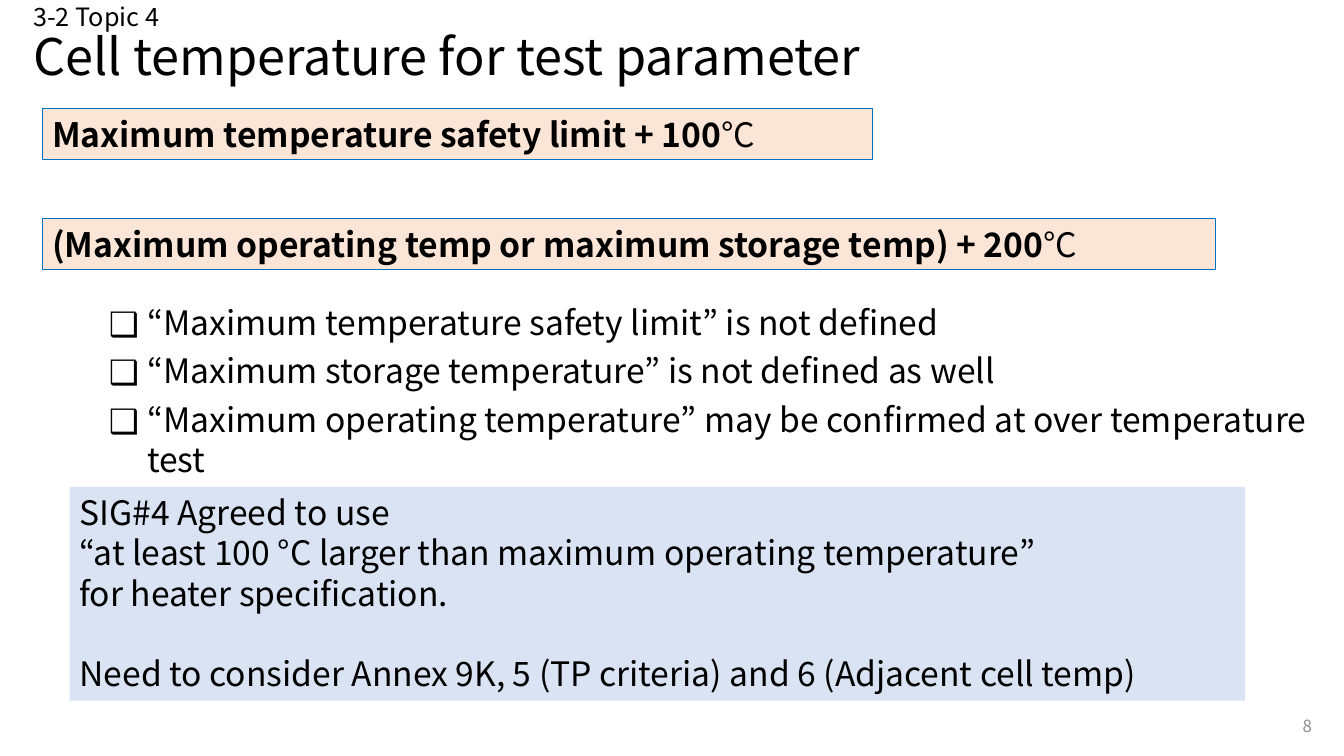
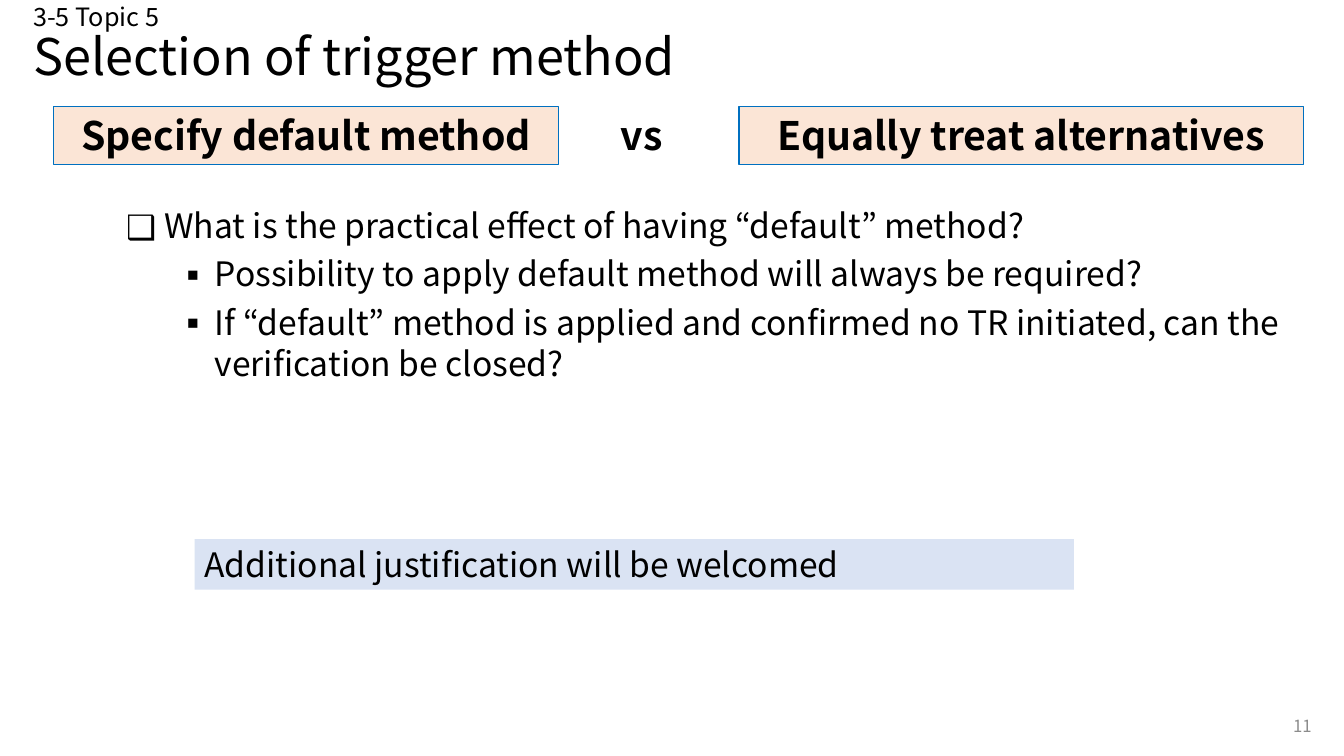
from dataclasses import dataclass

from lxml import etree
from pptx import Presentation
from pptx.dml.color import RGBColor
from pptx.enum.shapes import MSO_SHAPE
from pptx.enum.text import MSO_ANCHOR, MSO_AUTO_SIZE, PP_ALIGN
from pptx.oxml.ns import qn
from pptx.util import Inches, Pt

RECT = MSO_SHAPE.RECTANGLE
TOP, MIDDLE = MSO_ANCHOR.TOP, MSO_ANCHOR.MIDDLE
LEFT, CENTER, RIGHT = PP_ALIGN.LEFT, PP_ALIGN.CENTER, PP_ALIGN.RIGHT
FIXED = MSO_AUTO_SIZE.NONE

FONT = "Noto Sans CJK JP"
BLACK, GRAY = "000000", "8C8C8C"
PEACH, BLUE, PALE = "FBE5D6", "0070C0", "DAE3F3"
BULLETS = "❑▪"
LINE_GAP = 28.8

Area = tuple[float, float, float, float]


@dataclass
class Box:
    area: Area
    text: str
    size: float = 24
    bold: bool = False
    fill: str = ""
    line: str = ""
    align: PP_ALIGN = LEFT
    anchor: MSO_ANCHOR = TOP
    color: str = BLACK
    tail: str = ""
    gap: float = 0


@dataclass
class Item:
    text: str
    level: int = 0


@dataclass
class Page:
    number: int
    topic: str
    title: str
    area: Area
    items: list[Item]
    boxes: list[Box]


def paint(color: str) -> RGBColor:
    return RGBColor.from_string(color)


def style(run, size: float, bold: bool = False, color: str = BLACK) -> None:
    font = run.font
    font.size, font.bold, font.name = Pt(size), bold, FONT
    font.color.rgb = paint(color)
    etree.SubElement(run._r.get_or_add_rPr(), qn("a:ea"), typeface=FONT)


def place(shape, area: Area) -> None:
    shape.left, shape.top, shape.width, shape.height = map(Inches, area)


def setup(shape, anchor: MSO_ANCHOR):
    frame = shape.text_frame
    frame.word_wrap, frame.auto_size = True, FIXED
    frame.vertical_anchor = anchor
    return frame


def draw_box(slide, box: Box) -> None:
    area = map(Inches, box.area)
    if box.fill:
        shape = slide.shapes.add_shape(RECT, *area)
        shape.shadow.inherit = False
        shape.fill.solid()
        shape.fill.fore_color.rgb = paint(box.fill)
        if box.line:
            shape.line.color.rgb = paint(box.line)
            shape.line.width = Pt(0.75)
        else:
            shape.line.fill.background()
    else:
        shape = slide.shapes.add_textbox(*area)
    frame = setup(shape, box.anchor)
    frame.text = box.text
    for para in frame.paragraphs:
        para.alignment = box.align
        style(para.runs[0], box.size, box.bold, box.color)
    last = frame.paragraphs[-1]
    last.space_before = Pt(box.gap)
    if box.tail:
        run = last.add_run()
        run.text = box.tail
        style(run, box.size, color=box.color)


def draw_title(slide, topic: str, title: str) -> None:
    shape = slide.shapes.title
    place(shape, (0.23, 0, 12.88, 0.91))
    frame = setup(shape, MIDDLE)
    frame.text = f"{topic}\n{title}"
    for para, size in zip(frame.paragraphs, (18, 36)):
        para.alignment, para.line_spacing = LEFT, 0.9
        para.space_before = Pt(0)
        style(para.runs[0], size)


def draw_list(slide, area: Area, items: list[Item]) -> None:
    shape = slide.placeholders[1]
    place(shape, area)
    frame = setup(shape, TOP)
    frame.text = "\n".join(item.text for item in items)
    for para, item in zip(frame.paragraphs, items):
        para.level = item.level
        para.space_before, para.space_after = Pt(0), Pt(6)
        style(para.runs[0], 24)
        props = para._p.get_or_add_pPr()
        props.set("marL", str(Inches(0.38 + item.level * 0.5)))
        props.set("indent", str(Inches(-0.38)))
        etree.SubElement(props, qn("a:buFont"), typeface=FONT)
        etree.SubElement(props, qn("a:buChar"), char=BULLETS[item.level])


def draw_page(deck, page: Page) -> None:
    slide = deck.slides.add_slide(deck.slide_layouts[1])
    draw_title(slide, page.topic, page.title)
    draw_list(slide, page.area, page.items)
    for box in page.boxes:
        draw_box(slide, box)
    draw_box(slide, Box((10.11, 7, 3, 0.4), str(page.number), 12,
                        align=RIGHT, anchor=MIDDLE, color=GRAY))


def limit(top: float, width: float, text: str) -> Box:
    return Box((0.42, top, width, 0.5), text, bold=True,
               fill=PEACH, line=BLUE, tail="°C")


def option(left: float, width: float, text: str) -> Box:
    return Box((left, 1.06, width, 0.57), text, 28, True,
               PEACH, BLUE, CENTER)


PAGES = [
    Page(
        8, "3-2 Topic 4", "Cell temperature for test parameter",
        (0.98, 2.94, 12.12, 1.88),
        [
            Item("“Maximum temperature safety limit” is not defined"),
            Item("“Maximum storage temperature” is not defined as well"),
            Item("“Maximum operating temperature” may be confirmed "
                 "at over temperature test"),
        ],
        [
            limit(1.08, 8.23, "Maximum temperature safety limit + 100"),
            limit(2.17, 11.64, "(Maximum operating temp or "
                  "maximum storage temp) + 200"),
            Box((0.69, 4.83, 11.66, 2.12),
                "SIG#4 Agreed to use\n"
                "“at least 100 °C larger than maximum operating temperature”\n"
                "for heater specification.\n"
                "Need to consider Annex 9K, 5 (TP criteria) "
                "and 6 (Adjacent cell temp)",
                fill=PALE, gap=LINE_GAP),
        ],
    ),
    Page(
        11, "3-5 Topic 5", "Selection of trigger method",
        (1.15, 1.98, 11.79, 1.88),
        [
            Item("What is the practical effect of having “default” method?"),
            Item("Possibility to apply default method will always "
                 "be required?", 1),
            Item("If “default” method is applied and confirmed no TR "
                 "initiated, can the verification be closed?", 1),
        ],
        [
            option(0.53, 5.01, "Specify default method"),
            option(7.33, 5.6, "Equally treat alternatives"),
            Box((6.06, 1.06, 0.75, 0.57), "vs", 28, True),
            Box((1.93, 5.35, 8.72, 0.5),
                "Additional justification will be welcomed", fill=PALE),
        ],
    ),
]


def main() -> None:
    deck = Presentation()
    deck.slide_width, deck.slide_height = Inches(13.33), Inches(7.5)
    for page in PAGES:
        draw_page(deck, page)
    deck.save("out.pptx")


if __name__ == "__main__":
    main()
